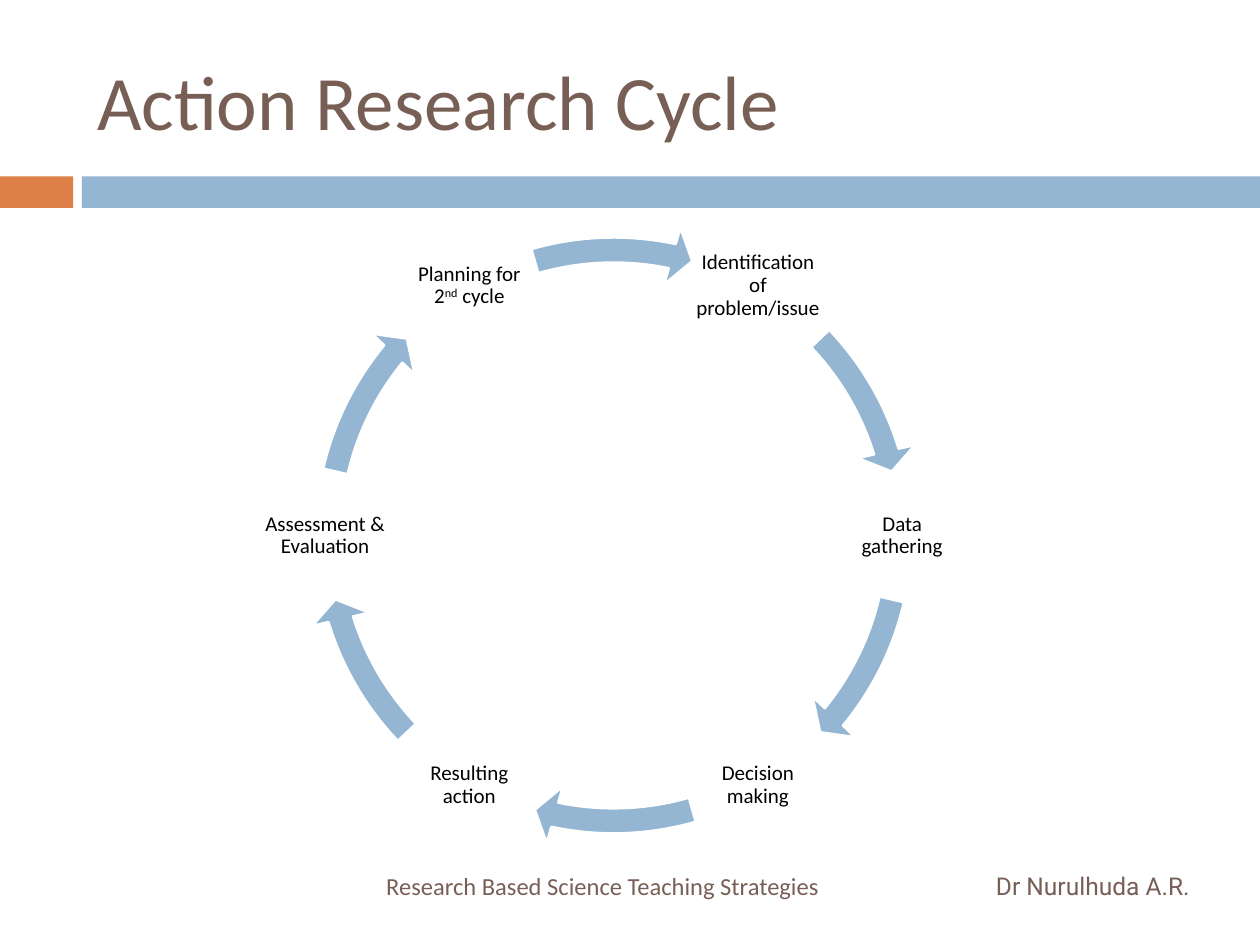
"""Build the Action Research Cycle slide."""
from math import cos, radians, sin

from pptx import Presentation
from pptx.dml.color import RGBColor
from pptx.enum.shapes import MSO_SHAPE
from pptx.enum.text import MSO_ANCHOR, PP_ALIGN
from pptx.util import Inches, Pt

TITLE = "Action Research Cycle"
FOOTERS = [
    ("Dr Nurulhuda A.R. ", (6.67, 6.83, 2.92, 0.4), "Roboto"),
    ("Research Based Science Teaching Strategies", (0.67, 6.83, 5.93, 0.4), "Calibri"),
]
STEPS = [
    ["Identification of problem/issue"],
    ["Data gathering"],
    ["Decision making"],
    ["Resulting action"],
    ["Assessment & Evaluation"],
    ["Planning for 2", "nd", " cycle"],
]
BANDS = [((0, 1.4, 0.58, 0.25), "accent"), ((0.65, 1.4, 9.35, 0.25), "main")]
HALF_TURN_ARCS = [(316.37, 342.9), (12.94, 39.46), (73.97, 101.86)]
CENTER_X, CENTER_Y, RADIUS = 4.87, 4.25, 2.29
LABEL, RING = 1.02, 5
THEME = {
    "main": RGBColor.from_string("94B6D2"),
    "accent": RGBColor.from_string("DD8047"),
    "heading": RGBColor.from_string("775F55"),
    "text": RGBColor.from_string("000000"),
    "edge": RGBColor.from_string("FFFFFF"),
    "font": "Calibri",
    "title_size": 44, "footer_size": 14, "label_size": 12,
}


def format_runs(p, size, color, font=THEME["font"]):
    for r in p.runs:
        r.font.size, r.font.name = Pt(size), font
        r.font.color.rgb = THEME[color]


def add_filled(s, kind, box, color):
    sp = s.shapes.add_shape(kind, *map(Inches, box))
    sp.shadow.inherit = False
    sp.fill.solid()
    sp.fill.fore_color.rgb = THEME[color]
    sp.line.fill.background()
    return sp


def add_text(s, box, parts, align):
    tf = s.shapes.add_textbox(*map(Inches, box)).text_frame
    tf.word_wrap = True
    tf.vertical_anchor = MSO_ANCHOR.MIDDLE
    p = tf.paragraphs[0]
    p.alignment = align
    for part in parts:
        p.add_run().text = part
    return tf


def add_title(s):
    sp = s.shapes.title
    sp.left, sp.top, sp.width, sp.height = map(Inches, (0.67, 0.25, 8.92, 1.08))
    tf = sp.text_frame
    tf.text = TITLE
    tf.vertical_anchor = MSO_ANCHOR.MIDDLE
    p = tf.paragraphs[0]
    p.alignment = PP_ALIGN.LEFT
    format_runs(p, THEME["title_size"], "heading")


def add_step(s, i, parts):
    angle = radians(60 * (i - 1))
    left = CENTER_X + RADIUS * cos(angle) - LABEL / 2
    top = CENTER_Y + RADIUS * sin(angle) - LABEL / 2
    tf = add_text(s, (left, top, LABEL, LABEL), parts, PP_ALIGN.CENTER)
    tf.margin_left = tf.margin_right = tf.margin_top = tf.margin_bottom = Inches(0.02)
    p = tf.paragraphs[0]
    p.line_spacing, p.space_after = 0.9, Pt(4.2)
    format_runs(p, THEME["label_size"], "text")
    for r in p.runs[1:2]:
        r.font._element.set("baseline", "30000")


def add_arrow(s, i):
    turn, arc = divmod(i, len(HALF_TURN_ARCS))
    start, end = ((a + 180 * turn) % 360 for a in HALF_TURN_ARCS[arc])
    box = (CENTER_X - RING / 2, CENTER_Y - RING / 2, RING, RING)
    sp = add_filled(s, MSO_SHAPE.CIRCULAR_ARROW, box, "main")
    sp.line.color.rgb, sp.line.width = THEME["edge"], Pt(1.5)
    degree = 0.6
    for n, value in enumerate((0.04, 4.17 * degree, end * degree, start * degree, 0.047)):
        sp.adjustments[n] = value


def main():
    prs = Presentation()
    prs.slide_width, prs.slide_height = Inches(10), Inches(7.5)
    s = prs.slides.add_slide(prs.slide_layouts[5])
    for box, color in BANDS:
        add_filled(s, MSO_SHAPE.RECTANGLE, box, color)
    add_title(s)
    for text, box, font in FOOTERS:
        tf = add_text(s, box, [text], PP_ALIGN.RIGHT)
        format_runs(tf.paragraphs[0], THEME["footer_size"], "heading", font)
    for i, parts in enumerate(STEPS):
        add_step(s, i, parts)
        add_arrow(s, i)
    prs.save("out.pptx")


if __name__ == "__main__":
    main()
